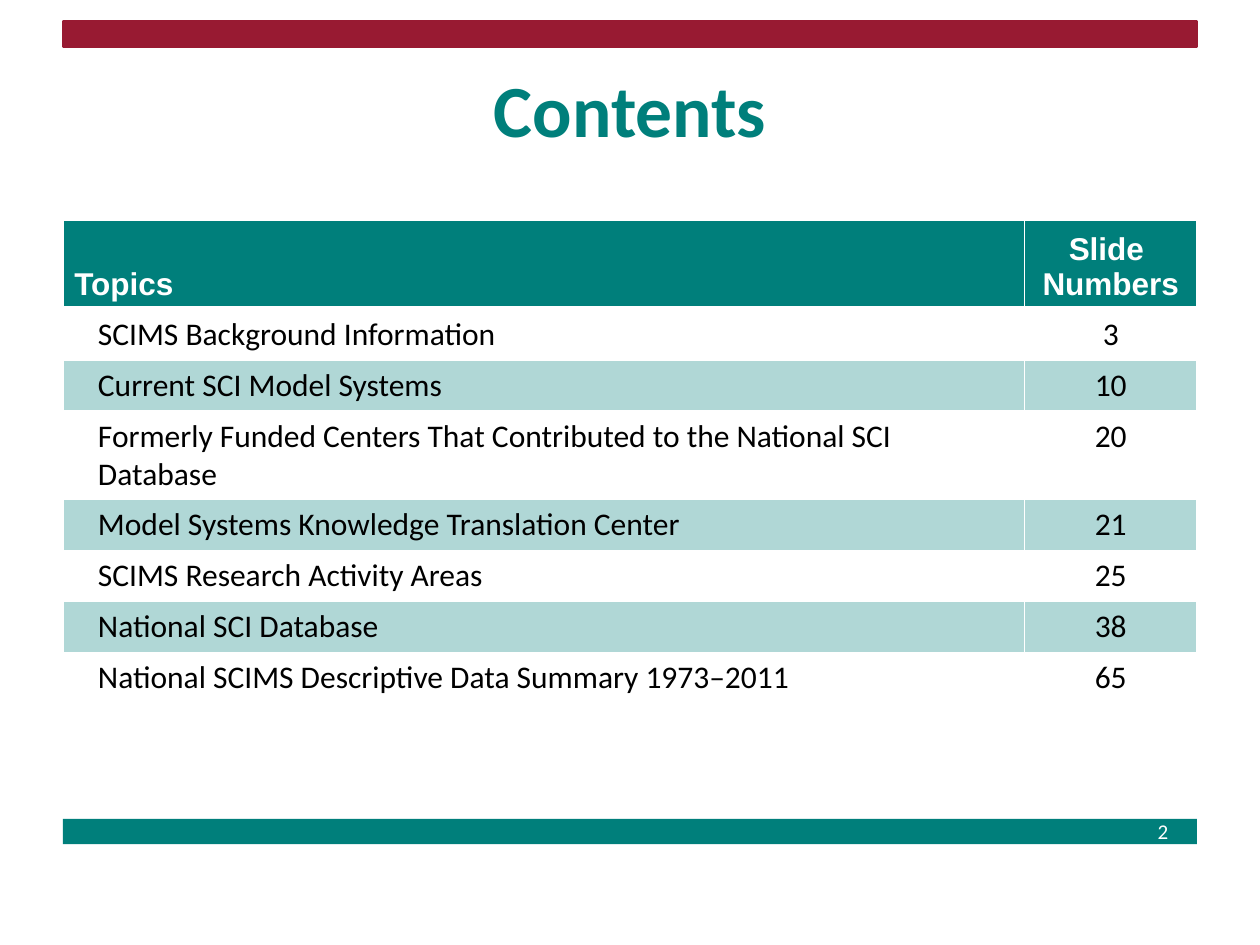
from dataclasses import dataclass

from lxml import etree
from pptx import Presentation
from pptx.dml.color import RGBColor
from pptx.enum.shapes import MSO_SHAPE
from pptx.enum.text import MSO_ANCHOR, MSO_AUTO_SIZE, PP_ALIGN
from pptx.oxml.ns import qn
from pptx.util import Pt

RECTANGLE = MSO_SHAPE.RECTANGLE
LEFT, CENTER = PP_ALIGN.LEFT, PP_ALIGN.CENTER
TOP, MIDDLE, BOTTOM = MSO_ANCHOR.TOP, MSO_ANCHOR.MIDDLE, MSO_ANCHOR.BOTTOM
NO_AUTOFIT = MSO_AUTO_SIZE.NONE

TEAL = RGBColor(0x00, 0x7F, 0x7B)
CRIMSON = RGBColor(0x98, 0x1A, 0x32)
WHITE = RGBColor(0xFF, 0xFF, 0xFF)
BLACK = RGBColor(0x00, 0x00, 0x00)

MARGIN = 36
CONTENT_WIDTH = 648
BAND_OPACITY = 31
TOPIC_INDENT = 13.5
HEADER_HEIGHT = 50.4
ROW_HEIGHT = 29.2
COLUMN_WIDTHS = (549.5, 98.5)


@dataclass
class Bar:
    top: float
    color: RGBColor
    line_width: float = 0


@dataclass
class TextStyle:
    font: str
    size: float
    color: RGBColor
    bold: bool = False


@dataclass
class Topic:
    title: str
    slide_number: int


BARS = [Bar(468, TEAL), Bar(12.25, CRIMSON, 1.5)]
TITLE_STYLE = TextStyle("Calibri", 42, TEAL, True)
HEADER_STYLE = TextStyle("Arial", 18, WHITE, True)
BODY_STYLE = TextStyle("Calibri", 18, BLACK)
NUMBER_STYLE = TextStyle("Calibri", 12, WHITE)
TOPICS = [
    Topic("SCIMS Background Information", 3),
    Topic("Current SCI Model Systems", 10),
    Topic("Formerly Funded Centers That Contributed to the National SCI Database", 20),
    Topic("Model Systems Knowledge Translation Center", 21),
    Topic("SCIMS Research Activity Areas", 25),
    Topic("National SCI Database", 38),
    Topic("National SCIMS Descriptive Data Summary 1973–2011", 65),
]


def write_text(frame, text: str, style: TextStyle, alignment=LEFT) -> None:
    frame.text = text
    for paragraph in frame.paragraphs:
        paragraph.alignment = alignment
        font = paragraph.font
        font.name, font.size, font.bold = style.font, Pt(style.size), style.bold
        font.color.rgb = style.color


def draw_bar(page, bar: Bar) -> None:
    shape = page.shapes.add_shape(
        RECTANGLE, Pt(MARGIN), Pt(bar.top), Pt(CONTENT_WIDTH), Pt(14.4))
    shape.shadow.inherit = False
    shape.fill.solid()
    shape.fill.fore_color.rgb = bar.color
    if bar.line_width:
        shape.line.color.rgb = bar.color
        shape.line.width = Pt(bar.line_width)
    else:
        shape.line.fill.background()


def draw_title(page, text: str) -> None:
    title = page.shapes.title
    title.left, title.top = Pt(MARGIN), Pt(26.6)
    title.width, title.height = Pt(CONTENT_WIDTH), Pt(85)
    frame = title.text_frame
    frame.auto_size = NO_AUTOFIT
    frame.vertical_anchor = MIDDLE
    write_text(frame, text, TITLE_STYLE, CENTER)
    frame.paragraphs[0].line_spacing = Pt(36)


def draw_slide_number(page, text: str) -> None:
    box = page.shapes.add_textbox(Pt(654.5), Pt(464.4), Pt(30), Pt(21.6))
    box.text_frame.word_wrap = True
    write_text(box.text_frame, text, NUMBER_STYLE)


def set_borders(cell, widths: dict[str, float]) -> None:
    properties = cell._tc.get_or_add_tcPr()
    for side, width in widths.items():
        line = etree.SubElement(properties, qn(f"a:{side}"), w=str(Pt(width)))
        fill = etree.SubElement(line, qn("a:solidFill"))
        etree.SubElement(fill, qn("a:srgbClr"), val=str(WHITE))


def set_fill(cell, color: RGBColor, opacity: int = 100) -> None:
    cell.fill.solid()
    cell.fill.fore_color.rgb = color
    if opacity < 100:
        color_element = cell._tc.tcPr.find(".//" + qn("a:solidFill") + "[last()]/" + qn("a:srgbClr"))
        for fill in cell._tc.tcPr.findall(qn("a:solidFill")):
            color_element = fill.find(qn("a:srgbClr"))
        etree.SubElement(color_element, qn("a:alpha"), val=str(opacity * 1000))


def format_cell(cell, row: int, column: int, text: str) -> None:
    is_header = row == 0
    set_borders(cell, {"lnL": 1, "lnR": 1, "lnT": 3 if row == 1 else 1,
                       "lnB": 3 if is_header else 1})
    if is_header:
        set_fill(cell, TEAL)
    elif row % 2 == 0:
        set_fill(cell, TEAL, BAND_OPACITY)
    else:
        cell.fill.background()
    cell.vertical_anchor = BOTTOM if is_header else TOP
    cell.margin_left = cell.margin_right = Pt(6.5)
    cell.margin_top = cell.margin_bottom = Pt(3.6)
    write_text(cell.text_frame, text, HEADER_STYLE if is_header else BODY_STYLE,
               CENTER if column else LEFT)
    if not is_header and column == 0:
        properties = cell.text_frame.paragraphs[0]._p.get_or_add_pPr()
        properties.set("marL", str(Pt(TOPIC_INDENT)))
        properties.set("indent", "0")


def draw_contents(page, topics: list[Topic]) -> None:
    rows = [("Topics", "Slide \nNumbers")]
    rows += [(topic.title, str(topic.slide_number)) for topic in topics]
    height = HEADER_HEIGHT + ROW_HEIGHT * len(topics)
    table = page.shapes.add_table(
        len(rows), len(COLUMN_WIDTHS), Pt(MARGIN), Pt(126),
        Pt(CONTENT_WIDTH), Pt(height)).table
    table.first_row = table.horz_banding = False
    for column, width in zip(table.columns, COLUMN_WIDTHS):
        column.width = Pt(width)
    for row, texts in enumerate(rows):
        table.rows[row].height = Pt(ROW_HEIGHT if row else HEADER_HEIGHT)
        for column, text in enumerate(texts):
            format_cell(table.cell(row, column), row, column, text)


def main() -> None:
    deck = Presentation()
    deck.slide_width, deck.slide_height = Pt(720), Pt(540)
    page = deck.slides.add_slide(deck.slide_layouts[5])
    for bar in BARS:
        draw_bar(page, bar)
    draw_slide_number(page, "2")
    draw_title(page, "Contents")
    draw_contents(page, TOPICS)
    deck.save("out.pptx")


if __name__ == "__main__":
    main()
